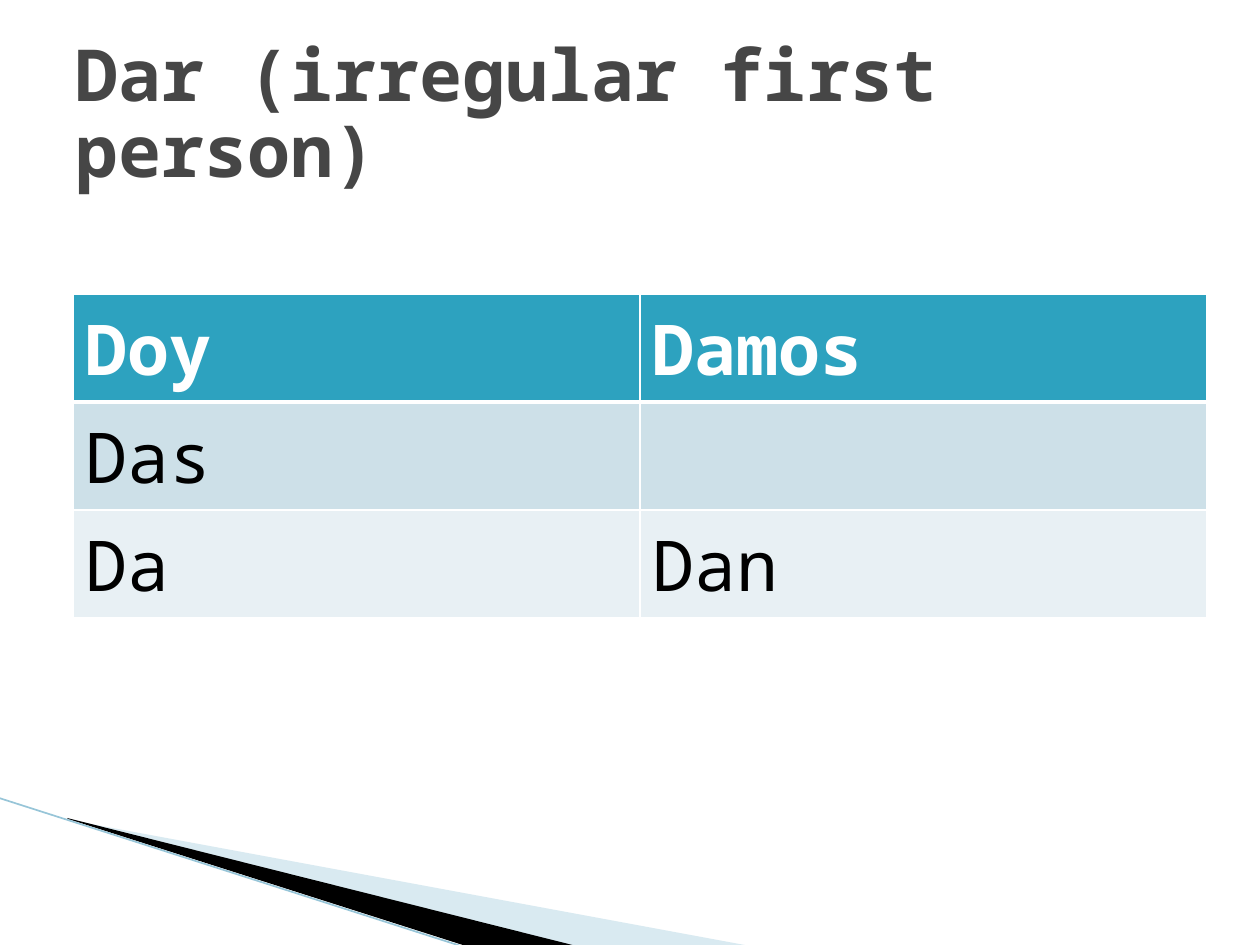
from typing import NamedTuple

from lxml.etree import SubElement
from pptx import Presentation
from pptx.dml.color import RGBColor
from pptx.enum.shapes import MSO_CONNECTOR
from pptx.enum.text import MSO_ANCHOR
from pptx.oxml.ns import qn
from pptx.util import Emu, Pt

PX_PER_INCH = 126
FONT = "Noto Sans Mono"


class Wedge(NamedTuple):
    points: list[tuple[int, int]]
    color: str
    opacity: int = 100


class Row(NamedTuple):
    words: tuple[str, str]
    fill: str
    color: str = "000000"
    bold: bool = False
    bottom_border: int = 1


WEDGES = [
    Wedge([(69, 820), (750, 946), (575, 946), (69, 819)], "A0CBDC", 40),
    Wedge([(67, 818), (576, 946), (469, 947), (68, 819)], "000000"),
]
ROWS = [
    Row(("Doy", "Damos"), "2DA2BF", "FFFFFF", True, 3),
    Row(("Das", ""), "CDE0E8"),
    Row(("Da", "Dan"), "E8F0F4"),
]


def px(n: int) -> Emu:
    return Emu(round(n * 914400 / PX_PER_INCH))


def rgb(color: str) -> RGBColor:
    return RGBColor.from_string(color)


def style_text(tf, size: int, color: str, bold: bool) -> None:
    for p in tf.paragraphs:
        for r in p.runs:
            r.font.name = FONT
            r.font.size = Pt(size)
            r.font.bold = bold
            r.font.color.rgb = rgb(color)


def draw_wedge(s, wedge: Wedge) -> None:
    builder = s.shapes.build_freeform(*wedge.points[0], scale=914400 / PX_PER_INCH)
    builder.add_line_segments(wedge.points[1:], close=True)
    sp = builder.convert_to_shape()
    sp.shadow.inherit = False
    sp.line.fill.background()
    sp.fill.solid()
    sp.fill.fore_color.rgb = rgb(wedge.color)
    if wedge.opacity < 100:
        clr = sp.fill._xPr.find(".//" + qn("a:srgbClr"))
        SubElement(clr, qn("a:alpha"), val=str(wedge.opacity * 1000))


def draw_edge_line(s) -> None:
    line = s.shapes.add_connector(
        MSO_CONNECTOR.STRAIGHT, px(-1), px(798), px(467), px(948))
    line.line.color.rgb = rgb("97C5D8")
    line.line.width = Pt(0.95)
    SubElement(line._element.spPr, qn("a:effectLst"))


def set_borders(cell, top: int, bottom: int) -> None:
    tc_pr = cell._tc.get_or_add_tcPr()
    widths = {"a:lnL": 1, "a:lnR": 1, "a:lnT": top, "a:lnB": bottom}
    for tag, width in widths.items():
        ln = SubElement(tc_pr, qn(tag), w=str(Pt(width)))
        fill = SubElement(ln, qn("a:solidFill"))
        SubElement(fill, qn("a:srgbClr"), val="FFFFFF")


def draw_table(s, rows: list[Row]) -> None:
    table = s.shapes.add_table(
        len(rows), 2, px(73), px(294), px(1134), px(107 * len(rows))).table
    top = 1
    for i, row in enumerate(rows):
        for j, word in enumerate(row.words):
            cell = table.cell(i, j)
            set_borders(cell, top, row.bottom_border)
            cell.fill.solid()
            cell.fill.fore_color.rgb = rgb(row.fill)
            cell.text_frame.text = word
            style_text(cell.text_frame, 40, row.color, row.bold)
        top = row.bottom_border


def draw_title(s, text: str) -> None:
    tf = s.shapes.add_textbox(px(63), px(38), px(1134), px(157)).text_frame
    tf.word_wrap = True
    tf.vertical_anchor = MSO_ANCHOR.MIDDLE
    tf.text = text
    tf.paragraphs[0].line_spacing = 0.88
    style_text(tf, 41, "464646", True)


def main() -> None:
    prs = Presentation()
    prs.slide_width, prs.slide_height = px(1260), px(945)
    s = prs.slides.add_slide(prs.slide_layouts[6])

    # Corner decoration
    for wedge in WEDGES:
        draw_wedge(s, wedge)
    draw_edge_line(s)

    # Conjugation table and title
    draw_table(s, ROWS)
    draw_title(s, "Dar (irregular first person)")

    prs.save("out.pptx")


if __name__ == "__main__":
    main()
